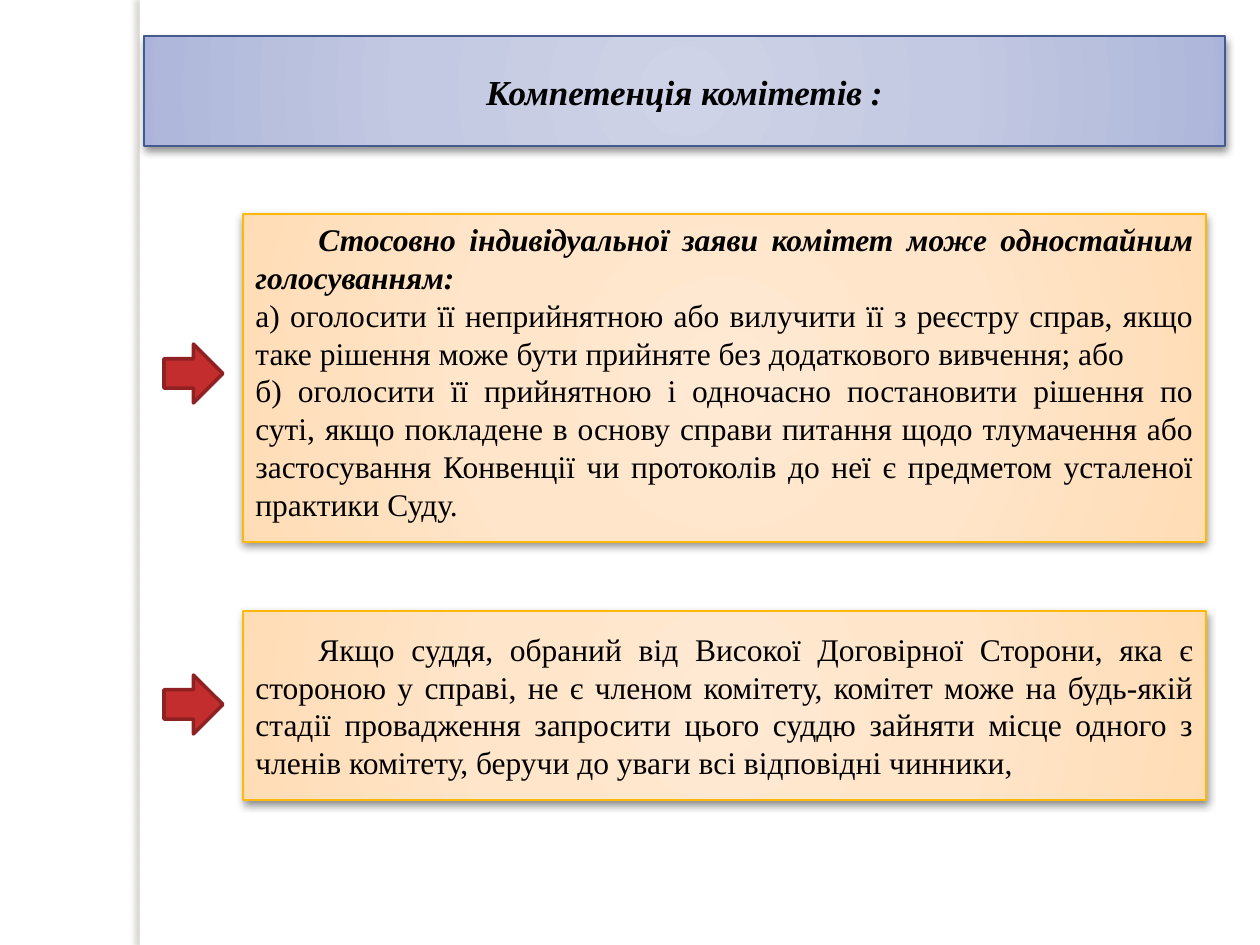
from pptx import Presentation
from pptx.dml.color import RGBColor
from pptx.enum.shapes import MSO_SHAPE
from pptx.enum.text import MSO_ANCHOR, PP_ALIGN
from pptx.oxml import parse_xml
from pptx.oxml.ns import nsdecls
from pptx.util import Pt

RECT, ARROW = MSO_SHAPE.RECTANGLE, MSO_SHAPE.RIGHT_ARROW
TOP, MIDDLE = MSO_ANCHOR.TOP, MSO_ANCHOR.MIDDLE
CENTER, JUSTIFY = PP_ALIGN.CENTER, PP_ALIGN.JUSTIFY
PX = 914400 / 126  # EMU in one px

THEME = {
    "font": "Times New Roman", "ink": "000000",
    "title": 20, "body": 18,
    "paper": "FFFFFF", "red": "C32D2E", "dark": "902122",
    "navy": "475A8D", "gold": "FEB80A",
    # Gradient stops: position in percent, colour
    "blue": [(0, "CFD3E7"), (50, "C3C9E2"), (97, "AFB8DA"), (100, "A8B2DA")],
    "peach": [(0, "FFE9D3"), (50, "FFE5C9"), (97, "FFDDB7"), (100, "FFDBB2")],
    # Shadows: colour, opacity percent, blur pt, distance pt, angle
    "drop": ("000000", 43, 5, 2, 90),
    "side": ("736F63", 25, 3, 3, 180),
}

HEAD = "Компетенція комітетів :"
STRONG = {"bold": True, "italic": True}
# Each paragraph is a list of runs: text, format
POWERS = [
    [("\t", {}),
     ("Стосовно індивідуальної заяви комітет може одностайним голосуванням:", STRONG)],
    [("a) оголосити її неприйнятною або вилучити її з реєстру справ, якщо таке "
      "рішення може бути прийняте без додаткового вивчення; або", {})],
    [("б) оголосити її прийнятною і одночасно постановити рішення по суті, якщо "
      "покладене в основу справи питання щодо тлумачення або застосування Конвенції "
      "чи протоколів до неї є предметом усталеної практики Суду.", {})],
]
JUDGE = [
    [("\tЯкщо суддя, обраний від Високої Договірної Сторони, яка є стороною у справі, "
      "не є членом комітету, комітет може на будь-якій стадії провадження запросити "
      "цього суддю зайняти місце одного з членів комітету, беручи до уваги всі "
      "відповідні чинники,", {})],
]


def radial(shape, stops):
    """Fill a shape with a gradient that spreads from its centre."""
    marks = "".join(f'<a:gs pos="{pos * 1000}"><a:srgbClr val="{tint}"/></a:gs>'
                    for pos, tint in stops)
    shape.fill.background()
    props = shape._element.spPr
    blank = props.find("{*}noFill")
    props.replace(blank, parse_xml(
        f'<a:gradFill {nsdecls("a")} rotWithShape="1"><a:gsLst>{marks}</a:gsLst>'
        '<a:path path="circle"><a:fillToRect l="50000" t="50000" r="50000" b="50000"/>'
        '</a:path></a:gradFill>'))


def shade(shape, spec_row):
    """Add an outer shadow."""
    tint, alpha, blur, dist, angle = spec_row
    shape._element.spPr.find("{*}effectLst").append(parse_xml(
        f'<a:outerShdw {nsdecls("a")} blurRad="{Pt(blur)}" dist="{Pt(dist)}" '
        f'dir="{angle * 60000}" algn="ctr" rotWithShape="0"><a:srgbClr val="{tint}">'
        f'<a:alpha val="{alpha * 1000}"/></a:srgbClr></a:outerShdw>'))


def draw(slide, kind, box, fill, line=None, width=0.75, shadow=None):
    """Place one shape; fill is a colour or a list of gradient stops."""
    shape = slide.shapes.add_shape(kind, *(round(n * PX) for n in box))
    shape.shadow.inherit = False
    if isinstance(fill, list):
        radial(shape, fill)
    else:
        shape.fill.solid()
        shape.fill.fore_color.rgb = RGBColor.from_string(fill)
    if line:
        shape.line.color.rgb = RGBColor.from_string(line)
        shape.line.width = Pt(width)
    else:
        shape.line.fill.background()
    if shadow:
        shade(shape, shadow)
    return shape


def write(shape, paras, size, align, anchor):
    """Fill a shape with paragraphs of formatted runs."""
    frame = shape.text_frame
    frame.word_wrap = True
    frame.vertical_anchor = anchor
    base = {"name": THEME["font"], "size": Pt(size), "bold": False, "italic": False}
    for i, runs in enumerate(paras):
        para = frame.add_paragraph() if i else frame.paragraphs[0]
        para.alignment = align
        for text, style in runs:
            run = para.add_run()
            run.text = text
            for key, value in {**base, **style}.items():
                setattr(run.font, key, value)
            run.font.color.rgb = RGBColor.from_string(THEME["ink"])


def edge(slide, box):
    """Margin strip with a soft shadow to its left."""
    draw(slide, RECT, box, THEME["paper"], shadow=THEME["side"])


def title(slide, box):
    """Heading banner."""
    bar = draw(slide, RECT, box, THEME["blue"], THEME["navy"], shadow=THEME["drop"])
    write(bar, [[(HEAD, STRONG)]], THEME["title"], CENTER, MIDDLE)


def point(slide, box, paras, anchor, drop):
    """Text panel with an arrow on its left, drop px below the panel's top."""
    left, top, _, _ = box
    panel = draw(slide, RECT, box, THEME["peach"], THEME["gold"], shadow=THEME["drop"])
    write(panel, paras, THEME["body"], JUSTIFY, anchor)
    draw(slide, ARROW, (left - 79, top + drop, 59, 59), THEME["red"], THEME["dark"], 2)


def main():
    deck = Presentation()
    deck.slide_width, deck.slide_height = round(1260 * PX), round(945 * PX)
    slide = deck.slides.add_slide(deck.slide_layouts[6])
    edge(slide, (140, 0, 10, 945))
    title(slide, (144, 36, 1081, 110))
    point(slide, (243, 214, 963, 328), POWERS, TOP, 130)
    point(slide, (243, 611, 963, 189), JUDGE, MIDDLE, 64)
    deck.save("out.pptx")


if __name__ == "__main__":
    main()
